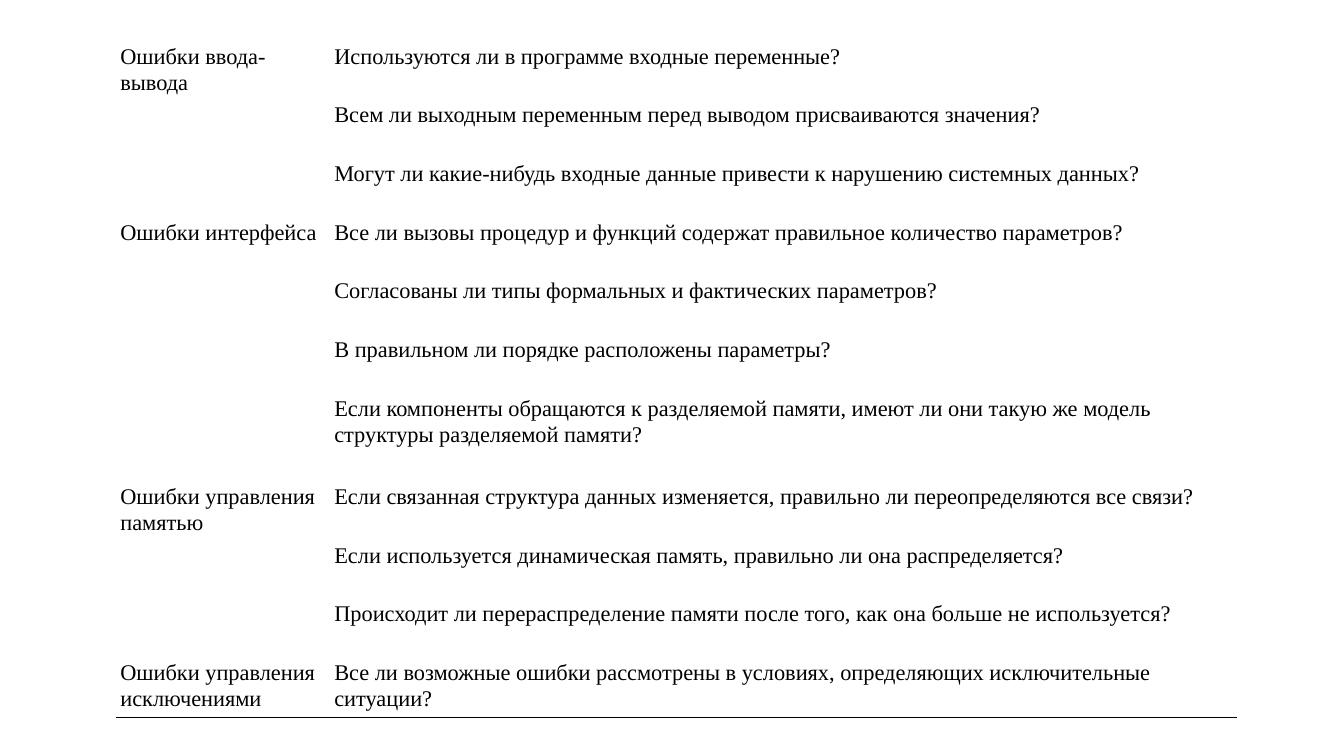
from dataclasses import dataclass

from lxml.etree import SubElement
from pptx import Presentation
from pptx.dml.color import RGBColor
from pptx.enum.text import MSO_ANCHOR
from pptx.oxml.ns import qn
from pptx.table import Table, _Cell
from pptx.util import Pt


@dataclass(frozen=True)
class Theme:
    font: str = "Times New Roman"
    size: float = 16
    line_spacing: float = 1.07
    ink: str = "000000"
    paper: str = "FFFFFF"
    rule_width: float = 1


@dataclass(frozen=True)
class ErrorClass:
    name: str
    questions: tuple[str, ...]


THEME = Theme()

# Table geometry in points
LEFT, TOP = 83.15, 30.3
COLUMN_WIDTHS = (152.84, 647.28)
ROW_HEIGHT, TALL_ROW_HEIGHT = 41.94, 62.9
SIDE_MARGIN = 2.88
TALL_ROW = 6  # two-line question followed by a gap

CHECKLIST = (
    ErrorClass("Ошибки ввода-вывода", (
        "Используются ли в программе входные переменные?",
        "Всем ли выходным переменным перед выводом присваиваются значения?",
        "Могут ли какие-нибудь входные данные привести к нарушению системных данных?",
    )),
    ErrorClass("Ошибки интерфейса", (
        "Все ли вызовы процедур и функций содержат правильное количество параметров?",
        "Согласованы ли типы формальных и фактических параметров?",
        "В правильном ли порядке расположены параметры?",
        "Если компоненты обращаются к разделяемой памяти, имеют ли они такую же модель "
        "структуры разделяемой памяти?",
    )),
    ErrorClass("Ошибки управления памятью", (
        "Если связанная структура данных изменяется, правильно ли переопределяются все связи?",
        "Если используется динамическая память, правильно ли она распределяется?",
        "Происходит ли перераспределение памяти после того, как она больше не используется?",
    )),
    ErrorClass("Ошибки управления исключениями", (
        "Все ли возможные ошибки рассмотрены в условиях, определяющих исключительные ситуации?",
    )),
)


def write_cell(cell: _Cell, text: str) -> None:
    cell.text_frame.text = text
    para = cell.text_frame.paragraphs[0]
    para.line_spacing = THEME.line_spacing
    for span in para.runs:
        span.font.name = THEME.font
        span.font.size = Pt(THEME.size)
        span.font.color.rgb = RGBColor.from_string(THEME.ink)


def prepare_cell(cell: _Cell) -> None:
    cell.margin_left = cell.margin_right = Pt(SIDE_MARGIN)
    cell.margin_top = cell.margin_bottom = Pt(0)
    cell.vertical_anchor = MSO_ANCHOR.TOP
    cell.fill.solid()
    cell.fill.fore_color.rgb = RGBColor.from_string(THEME.paper)


def underline_cell(cell: _Cell) -> None:
    properties = cell._tc.get_or_add_tcPr()
    border = SubElement(properties, qn("a:lnB"), w=str(Pt(THEME.rule_width)))
    fill = SubElement(border, qn("a:solidFill"))
    SubElement(fill, qn("a:srgbClr"), val=THEME.ink)
    properties.insert(0, border)  # borders come before the fill


def fill_checklist(table: Table) -> None:
    row = 0
    for error_class in CHECKLIST:
        write_cell(table.cell(row, 0), error_class.name)
        for question in error_class.questions:
            write_cell(table.cell(row, 1), question)
            row += 1


def main() -> None:
    deck = Presentation()
    deck.slide_width, deck.slide_height = Pt(960), Pt(540)
    page = deck.slides.add_slide(deck.slide_layouts[6])

    # Plain table without style banding
    row_count = sum(len(error_class.questions) for error_class in CHECKLIST)
    heights = [TALL_ROW_HEIGHT if row == TALL_ROW else ROW_HEIGHT for row in range(row_count)]
    table = page.shapes.add_table(
        row_count, len(COLUMN_WIDTHS), Pt(LEFT), Pt(TOP),
        Pt(sum(COLUMN_WIDTHS)), Pt(sum(heights)),
    ).table
    table.first_row = table.horz_banding = False
    for column, width in zip(table.columns, COLUMN_WIDTHS):
        column.width = Pt(width)
    for row, height in zip(table.rows, heights):
        row.height = Pt(height)
    for cell in table.iter_cells():
        prepare_cell(cell)

    # Error classes, their questions and the closing rule
    fill_checklist(table)
    for cell in table.rows[row_count - 1].cells:
        underline_cell(cell)

    deck.save("out.pptx")


if __name__ == "__main__":
    main()
